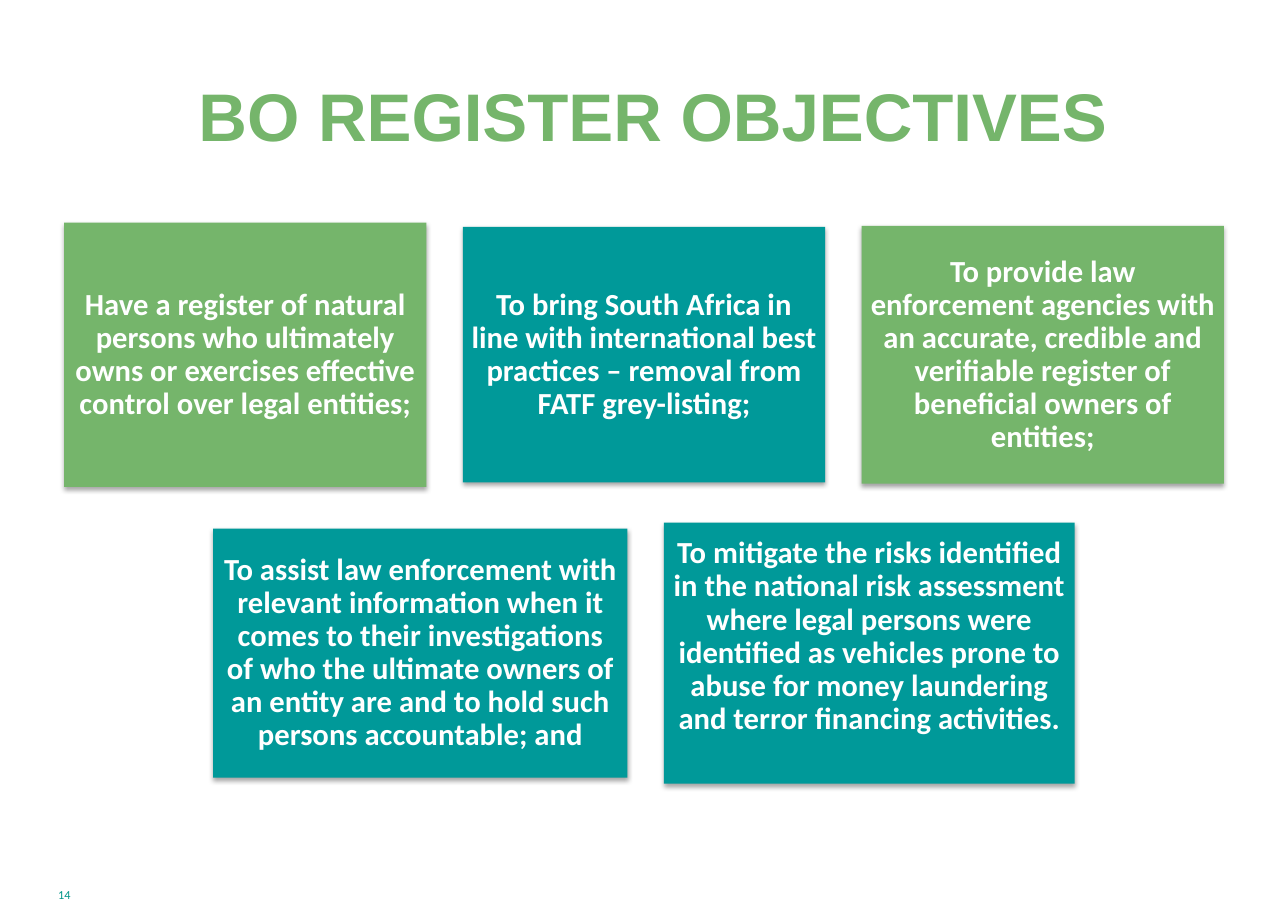
from lxml.etree import SubElement
from pptx import Presentation
from pptx.dml.color import RGBColor
from pptx.enum.shapes import MSO_SHAPE as Shape
from pptx.enum.text import MSO_ANCHOR as Anchor, PP_ALIGN as Align
from pptx.oxml.ns import qn
from pptx.util import Inches, Pt

GREEN, TEAL, NUMBER_TEAL, WHITE = "75B56B", "009999", "009689", "FFFFFF"
GAP = 2.82
ROWS = [
    (38.94, [
        (28.14, 29.02, GREEN, "Have a register of natural persons who ultimately owns or "
         "exercises effective control over legal entities;", 0.08),
        (28.14, 28.05, TEAL, "To bring South Africa in line with international best "
         "practices – removal from FATF grey-listing;", 0.08),
        (28.14, 28.3, GREEN, "To provide law enforcement agencies with an accurate, credible "
         "and verifiable register of beneficial owners of entities;", 0.08),
    ]),
    (71.7, [
        (32.16, 27.33, TEAL, "To assist law enforcement with relevant information when it "
         "comes to their investigations of who the ultimate owners of an entity are and to "
         "hold such persons accountable; and", 0.08),
        (31.91, 28.66, TEAL, "To mitigate the risks identified in the national risk "
         "assessment where legal persons were identified as vehicles prone to abuse for "
         "money laundering and terror financing activities.", 0.38),
    ]),
]


def color(value):
    return RGBColor.from_string(value)


def write(box, text, size, ink, font="Calibri", bold=False, spacing=1.0,
          insets=(0.11, 0.05, 0.11, 0.05)):
    frame = box.text_frame
    frame.word_wrap = True
    frame.vertical_anchor = Anchor.MIDDLE
    (frame.margin_left, frame.margin_top,
     frame.margin_right, frame.margin_bottom) = map(Inches, insets)
    para = frame.paragraphs[0]
    para.alignment = Align.CENTER
    para.line_spacing = spacing
    span = para.add_run()
    span.text = text
    span.font.name, span.font.size, span.font.bold = font, Pt(size), bold
    span.font.color.rgb = color(ink)


class ObjectivesPage:
    """Draws on one slide, with places given in percent of its size."""

    def __init__(self, deck):
        self.deck = deck
        self.page = deck.slides.add_slide(deck.slide_layouts[6])

    def place(self, left, top, width, height):
        across, down = self.deck.slide_width / 100, self.deck.slide_height / 100
        return [int(length) for length in
                (left * across, top * down, width * across, height * down)]

    def label(self, area, text, size, ink, **style):
        box = self.page.shapes.add_textbox(*self.place(*area))
        write(box, text, size, ink, **style)

    def shade(self, card):
        card.shadow.inherit = False
        effects = card._element.spPr.find(qn("a:effectLst"))
        shadow = SubElement(effects, qn("a:outerShdw"), blurRad=str(Pt(3.1)),
                            dist=str(Pt(1.8)), dir="5400000", rotWithShape="0")
        tint = SubElement(shadow, qn("a:srgbClr"), val="000000")
        SubElement(tint, qn("a:alpha"), val="35000")

    def card(self, area, fill, text, bottom):
        card = self.page.shapes.add_shape(Shape.RECTANGLE, *self.place(*area))
        card.fill.solid()
        card.fill.fore_color.rgb = color(fill)
        card.line.fill.background()
        self.shade(card)
        write(card, text, 20, WHITE, bold=True, spacing=0.9,
              insets=(0.08, 0.08, 0.08, bottom))

    def row(self, middle, cards):
        total = sum(card[0] for card in cards) + GAP * (len(cards) - 1)
        left = 50 - total / 2
        for width, height, fill, text, bottom in cards:
            self.card((left, middle - height / 2, width, height), fill, text, bottom)
            left += width + GAP


def main():
    deck = Presentation()
    deck.slide_width, deck.slide_height = Inches(11.69), Inches(8.27)
    page = ObjectivesPage(deck)
    page.label((3.51, 96.37, 2.99, 3.63), "14", 8, NUMBER_TEAL)
    page.label((4.96, 4.23, 90, 16.69), "BO REGISTER OBJECTIVES", 44, GREEN,
               font="Arial", bold=True, insets=(0.29, 0.05, 0.11, 0.05))
    for middle, cards in ROWS:
        page.row(middle, cards)
    deck.save("out.pptx")


if __name__ == "__main__":
    main()
